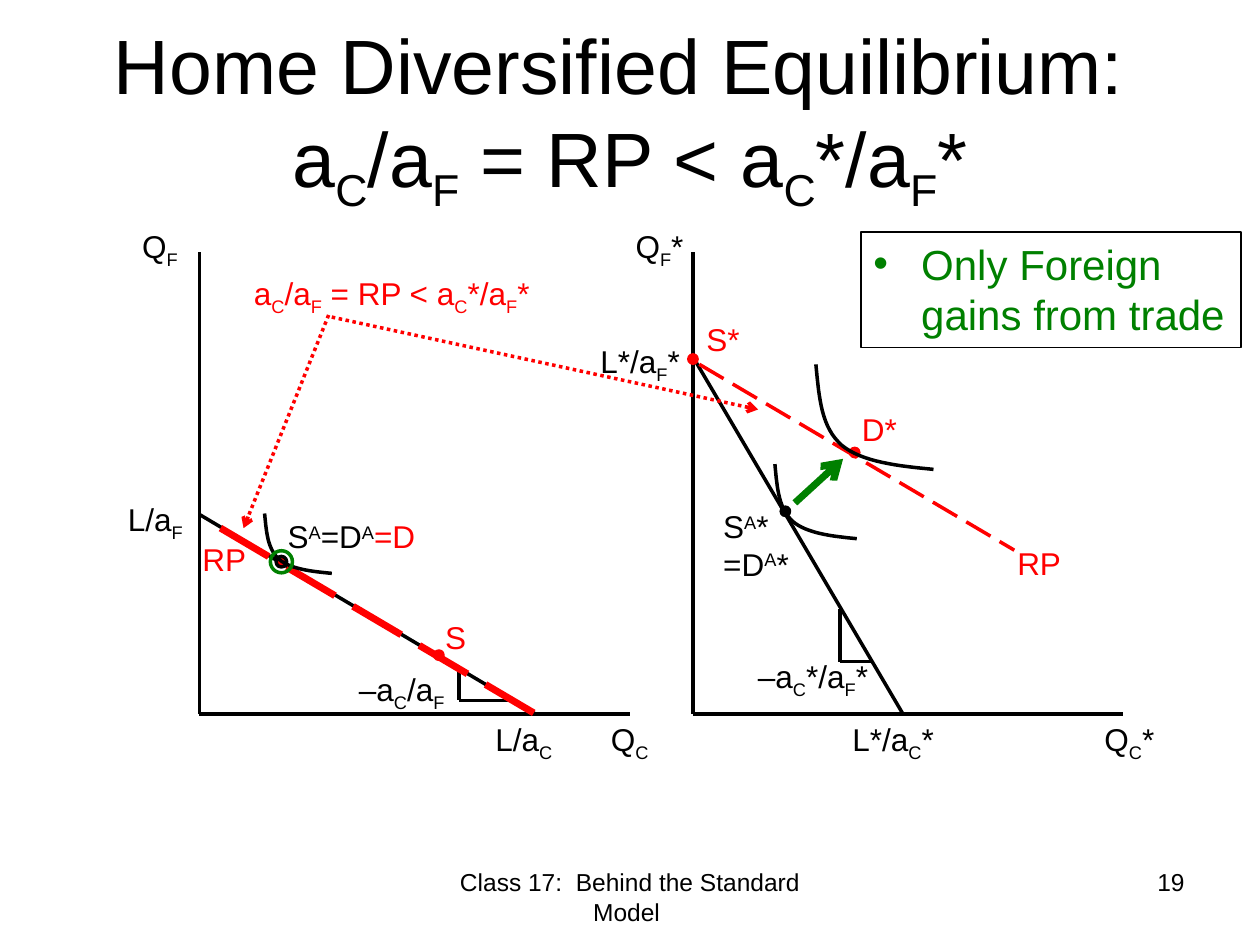
from itertools import product

from lxml import etree
from pptx import Presentation
from pptx import util as u
from pptx.dml.color import RGBColor
from pptx.enum import dml, shapes, text
from pptx.oxml.ns import qn

BLACK, RED, GREEN = "000000", "FF0000", "008000"
SHIFTS = {"_": "-25000", "^": "30000"}
CENTER, RIGHT = text.PP_ALIGN.CENTER, text.PP_ALIGN.RIGHT


def rgb(value):
    """Turn a hex string into a colour."""
    return RGBColor.from_string(value)


class Board:
    """Draw styled elements on a slide grid of 120 columns by 90 rows."""

    font = "Arial"
    size = 18

    def __init__(self, prs):
        """Add a blank slide and measure its grid."""
        self.slide = prs.slides.add_slide(prs.slide_layouts[6])
        self.shapes = self.slide.shapes
        self.col, self.row = prs.slide_width / 120, prs.slide_height / 90

    def at(self, *values):
        """Convert alternating columns and rows to lengths."""
        units = (self.col, self.row)
        return [u.Emu(round(v * units[i % 2])) for i, v in enumerate(values)]

    def stroke(self, sp, color, width):
        """Set an outline."""
        sp.line.color.rgb = rgb(color)
        sp.line.width = u.Pt(width)

    def add_runs(self, p, markup, color=BLACK, size=None):
        """Add runs in which _ lowers and ^ raises the next letter."""
        pieces = []
        for part in markup.replace("_", "|_").replace("^", "|^").split("|"):
            if part[:1] in SHIFTS:
                pieces.append((part[1], SHIFTS[part[0]]))
                part = part[2:]
            pieces.append((part, None))
        for words, shift in pieces:
            if not words:
                continue
            r = p.add_run()
            r.text = words
            r.font.name = self.font
            r.font.size = u.Pt(size or self.size)
            r.font.color.rgb = rgb(color)
            if shift:
                r.font._element.set("baseline", shift)

    def label(self, x, y, w, markup, color=BLACK, h=4.8, size=None,
              align=None, wrap=False, anchor=text.MSO_ANCHOR.TOP):
        """Add a text box with one paragraph per line."""
        tf = self.shapes.add_textbox(*self.at(x, y, w, h)).text_frame
        tf.word_wrap = wrap
        tf.vertical_anchor = anchor
        for i, line in enumerate(markup.split("\n")):
            p = tf.add_paragraph() if i else tf.paragraphs[0]
            p.alignment = align
            for j, words in enumerate(line.split("\v")):
                if j:
                    p.add_line_break()
                self.add_runs(p, words, color, size)
        return tf

    def line(self, x1, y1, x2, y2, color=BLACK, width=2, dash=None, arrow=False):
        """Add a straight line."""
        sp = self.shapes.add_connector(
            shapes.MSO_CONNECTOR.STRAIGHT, *self.at(x1, y1, x2, y2))
        self.stroke(sp, color, width)
        if dash:
            sp.line.dash_style = dash
        if arrow:
            etree.SubElement(sp.line._get_or_add_ln(), qn("a:tailEnd"), type="arrow")
        etree.SubElement(sp._element.spPr, qn("a:effectLst"))

    def outline(self, kind, x, y, w, h, color, width):
        """Add an unfilled preset shape."""
        sp = self.shapes.add_shape(kind, *self.at(x, y, w, h))
        sp.shadow.inherit = False
        sp.fill.background()
        self.stroke(sp, color, width)
        return sp

    def dot(self, x, y, color, edge=None, width=0.75, d=1.0):
        """Add a circle around a point, hollow without a fill colour."""
        sp = self.outline(shapes.MSO_SHAPE.OVAL, x - d / 2, y - d / 2, d, d,
                          edge or color, width)
        if color:
            sp.fill.solid()
            sp.fill.fore_color.rgb = rgb(color)

    def indifference(self, x, y, w, h):
        """Add a convex indifference curve inside a box."""
        arcs = [((1, 1), (.71, .97), (.39, .93), (.22, .77)),
                ((.22, .77), (.05, .6), (.03, .35), (0, 0))]
        points = []
        for arc, step in product(arcs, range(17)):
            t = step / 16
            weights = ((1 - t) ** 3, 3 * t * (1 - t) ** 2, 3 * t * t * (1 - t), t ** 3)
            px, py = (sum(k * c[i] for k, c in zip(weights, arc)) for i in (0, 1))
            points.append(self.at(x + w * px, y + h * py))
        builder = self.shapes.build_freeform(*points[0])
        builder.add_line_segments(points[1:], close=False)
        sp = builder.convert_to_shape()
        sp.shadow.inherit = False
        sp.fill.background()
        self.stroke(sp, BLACK, 2)

    def axes(self, x, star=""):
        """Add a pair of quantity axes with their names."""
        self.line(x, 68, x + 41, 68)
        self.line(x, 68, x, 24)
        self.label(x + 38, 68, 9, "Q_C" + star, wrap=True)
        self.label(x - 6.65, 21, 9, "Q_F" + star, wrap=True)

    def slope(self, x, top, bottom, right):
        """Add the two legs of a slope triangle."""
        self.line(x, top, x, bottom)
        self.line(right, bottom, x, bottom)

    def callout(self, x, y, w, h, words, color):
        """Add a framed bullet."""
        tf = self.outline(shapes.MSO_SHAPE.RECTANGLE, x, y, w, h, BLACK, 0.75).text_frame
        tf.word_wrap = True
        tf.vertical_anchor = text.MSO_ANCHOR.TOP
        p = tf.paragraphs[0]
        p.alignment = text.PP_ALIGN.LEFT
        p.space_before = u.Pt(5)
        self.add_runs(p, words, color, 24)
        pPr = p._p.get_or_add_pPr()
        pPr.set("marL", str(u.Inches(0.38)))
        pPr.set("indent", str(-u.Inches(0.38)))
        etree.SubElement(pPr, qn("a:buFont"), typeface=self.font)
        etree.SubElement(pPr, qn("a:buChar"), char="•")


def home(b):
    """Draw the home country's panel."""
    b.axes(19)
    b.line(19, 49, 51, 68)
    b.slope(43.7, 63.7, 66.7, 48.6)
    b.line(21, 50.3, 51, 68, RED, 4, dml.MSO_LINE.LONG_DASH)
    b.dot(41.8, 62.4, RED)
    b.dot(26.8, 53.5, RED, BLACK, 2)
    b.indifference(25.2, 48.9, 6.4, 5.7)
    b.dot(26.8, 53.5, None, GREEN, 2, 2.1)
    b.label(11, 47, 7.9, "L/a_F")
    b.label(46, 68, 8, "L/a_C")
    b.label(33, 63.2, 11, "–a_C/a_F")
    b.label(41.2, 58.3, 4.4, "S", RED)
    b.label(18.1, 50.8, 6.6, "RP", RED)
    tf = b.label(26.2, 48.7, 15, "S^A=D^A=D")
    tf.paragraphs[0].runs[-1].font.color.rgb = rgb(RED)


def foreign(b):
    """Draw the foreign country's panel."""
    b.axes(66, "*")
    b.line(66, 34, 86, 68)
    b.slope(80, 58, 63, 83)
    b.dot(66, 34.2, RED)
    b.dot(81.4, 43.1, RED)
    b.line(66.6, 34.7, 96.6, 52.4, RED, 2, dml.MSO_LINE.LONG_DASH)
    b.indifference(77.7, 34.7, 11.2, 10)
    b.indifference(73.8, 44.2, 7.8, 7.1)
    b.dot(74.8, 48.7, BLACK)
    b.line(75.7, 47.9, 80.3, 43.7, GREEN, 4, arrow=True)
    b.label(56, 32, 10.2, "L*/a_F*")
    b.label(80, 68, 10.4, "L*/a_C*")
    b.label(71, 62, 13.3, "–a_C*/a_F*")
    b.label(66.1, 29.9, 5.6, "S*", RED)
    b.label(80.9, 38.5, 5.8, "D*", RED)
    b.label(95.7, 51.2, 6.6, "RP", RED)
    b.label(67.7, 47.7, 8.9, "S^A*\n=D^A*", h=8.5)


def main():
    """Build and save the slide."""
    prs = Presentation()
    prs.slide_width, prs.slide_height = u.Inches(10), u.Inches(7.5)
    b = Board(prs)
    condition = "a_C/a_F = RP < a_C*/a_F*"
    b.label(4, 3.6, 112, "Home Diversified Equilibrium: \v" + condition, h=15,
            size=44, align=CENTER, wrap=True, anchor=text.MSO_ANCHOR.MIDDLE)
    home(b)
    foreign(b)
    b.label(23, 25.5, 36, condition, RED, wrap=True)
    for ends in ((31.3, 30, 23.2, 50.3), (31.6, 30.2, 72.2, 39)):
        b.line(*ends, RED, 2, dml.MSO_LINE.ROUND_DOT, True)
    b.callout(82, 22.1, 36.2, 11, "Only Foreign gains from trade", GREEN)
    b.label(41, 82, 38, "Class 17:  Behind the Standard Model ", h=6.2, size=14,
            align=CENTER, wrap=True)
    b.label(86, 82, 28, "19", h=6.2, size=14, align=RIGHT, wrap=True)
    prs.save("out.pptx")


if __name__ == "__main__":
    main()
